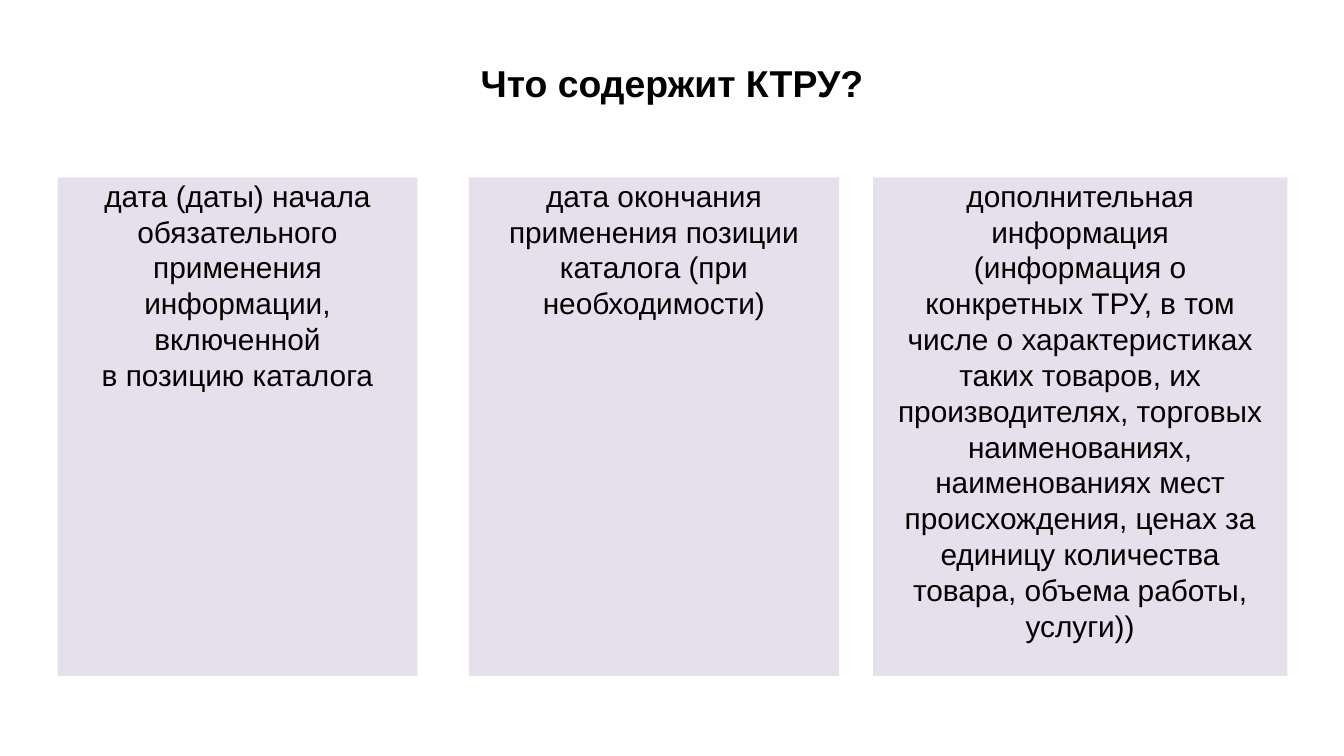
from pptx import Presentation
from pptx.dml.color import RGBColor
from pptx.enum.shapes import MSO_SHAPE
from pptx.enum.text import MSO_ANCHOR, PP_ALIGN
from pptx.util import Cm, Pt

RECTANGLE = MSO_SHAPE.RECTANGLE
TOP = MSO_ANCHOR.TOP
CENTER = PP_ALIGN.CENTER

BLACK = RGBColor(0x00, 0x00, 0x00)
LILAC = RGBColor(0xE6, 0xE0, 0xEC)

TITLE_ONLY = 5
CARD_TOP, CARD_HEIGHT = 3.35, 9.42

# Left edge and width in cm, then the lines of each card
CARDS = [
    (1.09, 6.8, [
        "дата (даты) начала",
        "обязательного применения",
        "информации, включенной",
        "в позицию каталога",
    ]),
    (8.86, 7.0, [
        "дата окончания",
        "применения позиции",
        "каталога (при",
        "необходимости)",
    ]),
    (16.5, 7.83, [
        "дополнительная",
        "информация",
        "(информация о",
        "конкретных ТРУ, в том",
        "числе о характеристиках",
        "таких товаров, их",
        "производителях, торговых",
        "наименованиях,",
        "наименованиях мест",
        "происхождения, ценах за",
        "единицу количества",
        "товара, объема работы,",
        "услуги))",
    ]),
]


def write_text(frame, lines, size=16, bold=False, spacing=None, side_inset=0):
    """Fill a text frame with one centred paragraph per line."""
    frame.word_wrap = True
    frame.vertical_anchor = TOP
    frame.margin_top = frame.margin_bottom = 0
    frame.margin_left = frame.margin_right = Cm(side_inset)
    frame.text = "\n".join(lines)
    for paragraph in frame.paragraphs:
        paragraph.alignment = CENTER
        paragraph.line_spacing = spacing
        paragraph.space_before = paragraph.space_after = Pt(0)
        for run in paragraph.runs:
            run.font.name = "Arial"
            run.font.size = Pt(size)
            run.font.bold = bold
            run.font.color.rgb = BLACK


class CatalogSlide:
    def __init__(self, presentation):
        layout = presentation.slide_layouts[TITLE_ONLY]
        self.slide = presentation.slides.add_slide(layout)
        self.card_fill = LILAC
        self.card_spacing = Pt(19.2)

    def title(self, text, left, top, width, height):
        heading = self.slide.shapes.title
        heading.left, heading.top = Cm(left), Cm(top)
        heading.width, heading.height = Cm(width), Cm(height)
        write_text(heading.text_frame, [text], size=20, bold=True)

    def card(self, lines, left, top, width, height):
        panel = self.slide.shapes.add_shape(
            RECTANGLE, Cm(left), Cm(top), Cm(width), Cm(height))
        panel.shadow.inherit = False
        panel.fill.solid()
        panel.fill.fore_color.rgb = self.card_fill
        panel.line.fill.background()
        write_text(panel.text_frame, lines, spacing=self.card_spacing,
                   side_inset=0.1)


def main():
    presentation = Presentation()
    presentation.slide_width = Cm(25.4)
    presentation.slide_height = Cm(14.28)

    catalog = CatalogSlide(presentation)
    catalog.title("Что содержит КТРУ?", 5.92, 1.14, 13.56, 1.85)
    for left, width, lines in CARDS:
        catalog.card(lines, left, CARD_TOP, width, CARD_HEIGHT)

    presentation.save("out.pptx")


if __name__ == "__main__":
    main()
